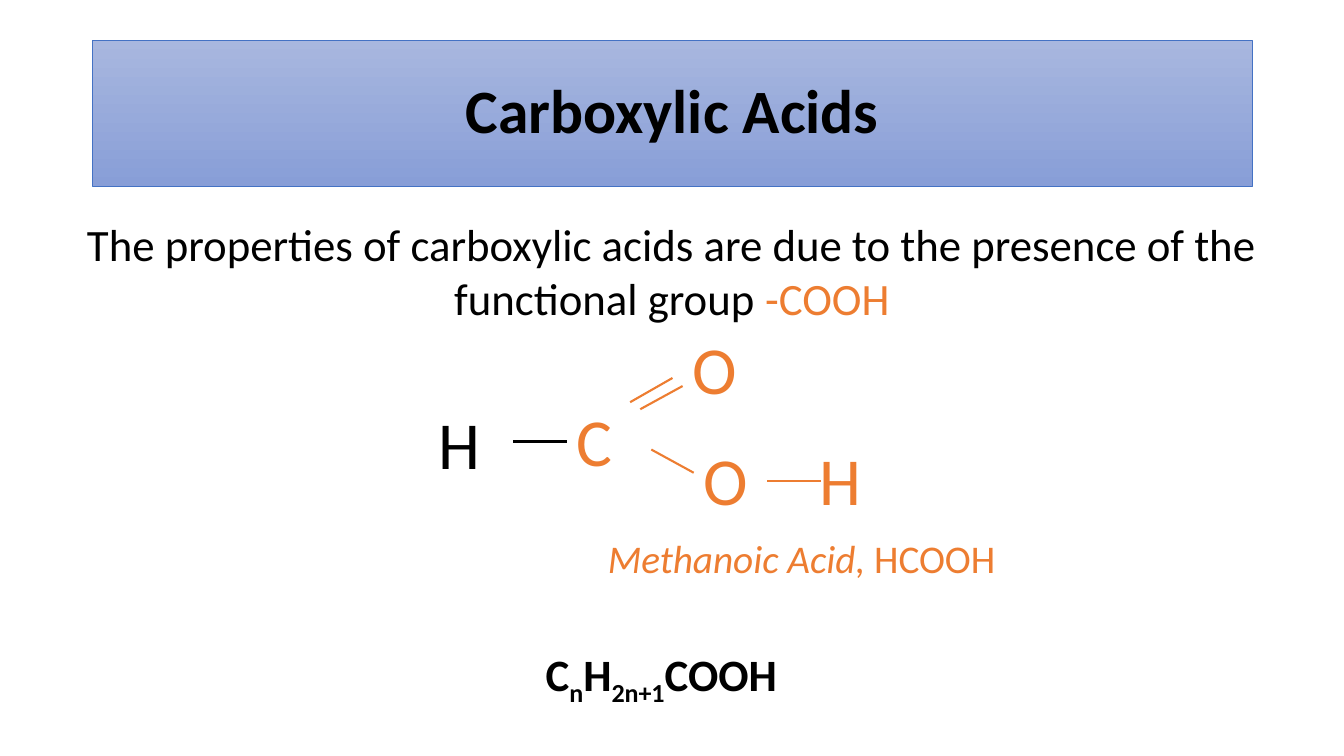
from lxml import etree
from pptx import Presentation
from pptx import util as u
from pptx.dml.color import RGBColor
from pptx.enum import shapes, text
from pptx.oxml.ns import qn

BLACK = RGBColor(0x00, 0x00, 0x00)
ORANGE = RGBColor(0xED, 0x7D, 0x31)
BLUE = RGBColor(0x44, 0x72, 0xC4)
GRADIENT = (RGBColor(0xA8, 0xB7, 0xDF), RGBColor(0x88, 0x9E, 0xD7))
PX = 9144  # EMU, 100 px to the inch
LEFT, CENTER = text.PP_ALIGN.LEFT, text.PP_ALIGN.CENTER


def px(*lengths):
    return [u.Emu(length * PX) for length in lengths]


def set_all(target, values):
    for name, value in values.items():
        setattr(target, name, value)


class SlideBuilder:
    font_name = "Calibri"
    bond_width = u.Pt(1.5)

    def __init__(self, slide):
        self.slide = slide

    def add_runs(self, shape, runs, size, align=LEFT, spacing=1.0,
                 anchor=text.MSO_ANCHOR.TOP):
        """Fill a shape with runs, each a (wording, format values) pair.

        A "baseline" value raises or lowers the run, in 1/1000 percent.
        """
        set_all(shape.text_frame, {"word_wrap": True, "vertical_anchor": anchor})
        paragraph = shape.text_frame.paragraphs[0]
        set_all(paragraph, {"alignment": align, "line_spacing": spacing})
        for wording, values in runs:
            run = paragraph.add_run()
            run.text = wording
            values = dict(values)
            color = values.pop("color", BLACK)
            baseline = values.pop("baseline", None)
            set_all(run.font, {"name": self.font_name, "size": u.Pt(size), **values})
            run.font.color.rgb = color
            if baseline is not None:
                run._r.get_or_add_rPr().set("baseline", str(baseline))

    def text_box(self, box, runs, size, **layout):
        shape = self.slide.shapes.add_textbox(*px(*box))
        self.add_runs(shape, runs, size, **layout)

    def banner(self, box, wording, size):
        shape = self.slide.shapes.add_shape(shapes.MSO_SHAPE.RECTANGLE, *px(*box))
        shape.shadow.inherit = False
        shape.fill.gradient()
        shape.fill.gradient_angle = 270
        for stop, color in zip(shape.fill.gradient_stops, GRADIENT):
            stop.color.rgb = color
        shape.line.color.rgb = BLUE
        shape.line.width = u.Pt(0.5)
        self.add_runs(shape, [(wording, {"bold": True})], size, align=CENTER,
                      spacing=0.9, anchor=text.MSO_ANCHOR.MIDDLE)

    def atom(self, symbol, left, top, color=ORANGE):
        self.text_box((left, top, 84, 91), [(symbol, {"color": color})], 48)

    def bond(self, start, end, color=ORANGE):
        line = self.slide.shapes.add_connector(
            shapes.MSO_CONNECTOR.STRAIGHT, *px(*start, *end))
        line.line.color.rgb = color
        line.line.width = self.bond_width
        etree.SubElement(line._element.spPr, qn("a:effectLst"))


def main():
    presentation = Presentation()
    width, height = px(1333, 750)
    set_all(presentation, {"slide_width": width, "slide_height": height})
    builder = SlideBuilder(
        presentation.slides.add_slide(presentation.slide_layouts[6]))

    builder.banner((92, 40, 1150, 145), "Carboxylic Acids", 44)
    builder.text_box((0, 210, 1333, 118), [
        ("The properties of carboxylic acids are due to the presence of the "
         "functional group ", {}),
        ("-COOH", {"color": ORANGE}),
    ], 32, align=CENTER)

    builder.atom("H", 425, 394, BLACK)
    builder.bond((509, 438), (562, 438), BLACK)
    for symbol, left, top in (("C", 562, 391), ("O", 677, 320),
                              ("O", 688, 430), ("H", 803, 430)):
        builder.atom(symbol, left, top)
    for start, end in (((667, 375), (625, 399)), ((677, 383), (635, 406)),
                       ((646, 446), (688, 469)), ((761, 477), (814, 477))):
        builder.bond(start, end)

    builder.text_box((593, 525, 609, 57), [
        ("Methanoic Acid, ", {"color": ORANGE, "italic": True}),
        ("HCOOH", {"color": ORANGE}),
    ], 28)

    bold = {"bold": True}
    subscript = {"bold": True, "baseline": -25000}
    builder.text_box((378, 637, 556, 59), [
        ("C", bold), ("n", subscript), ("H", bold), ("2n+1", subscript),
        ("COOH", bold),
    ], 32, align=CENTER, spacing=0.9)

    presentation.save("out.pptx")


if __name__ == "__main__":
    main()
